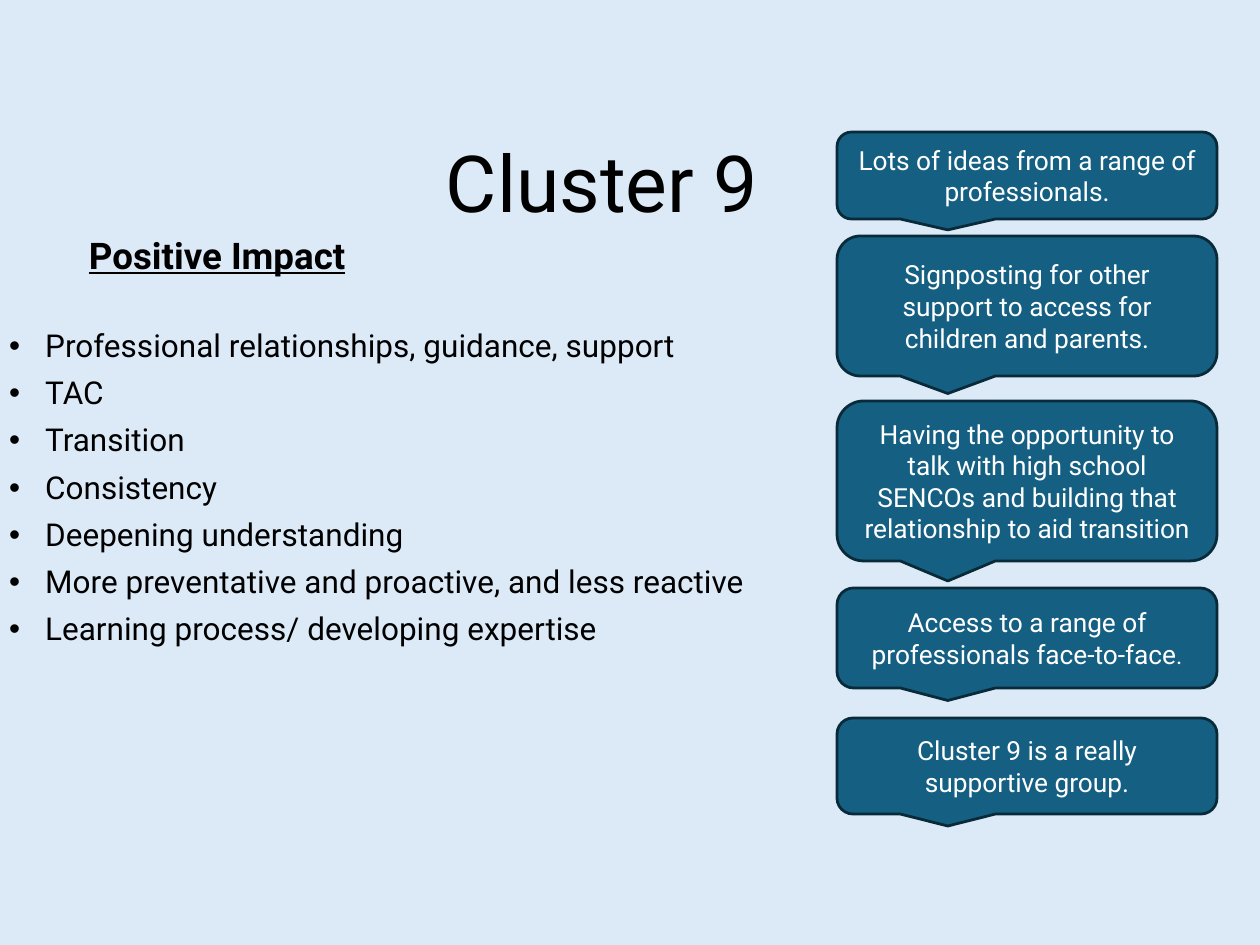
from lxml.etree import SubElement
from pptx import Presentation
from pptx.dml.color import RGBColor
from pptx.enum.shapes import MSO_SHAPE as SHAPE
from pptx.enum.text import MSO_ANCHOR as ANCHOR, MSO_AUTO_SIZE as AUTO, PP_ALIGN as ALIGN
from pptx.oxml.ns import qn
from pptx.util import Pt

# Content
TITLE = "Cluster 9"
HEADING = "Positive Impact"
IMPACTS = [
    "Professional relationships, guidance, support",
    "TAC",
    "Transition",
    "Consistency",
    "Deepening understanding",
    "More preventative and proactive, and less reactive",
    "Learning process/ developing expertise",
]
# Each callout: top, height, runs of (text, size)
CALLOUTS = [
    (132, 87, [("Lots of ideas from a range of professionals.", 14.2)]),
    (236, 140, [("Signposting for other support to access for children and parents.", 14.2)]),
    (401, 160, [("Having the opportunity to talk with high school SENCOs and "
                 "building that relationship to aid transition", 14.2)]),
    (588, 100, [("Access to a range of professionals face-to-face", 14.2), (".", 12.8)]),
    (718, 96, [("Cluster 9 is a really supportive group.", 14.2)]),
]

# Format
COLORS = {"bg": "DCEAF7", "text": "000000", "fill": "156082", "line": "092A39", "white": "FFFFFF"}
FONT = "Roboto"
PX = 6858  # EMU in one px
CALLOUT_LEFT, CALLOUT_WIDTH = 837, 380
INDENT = 36
BULLET = {"line_spacing": 0.9, "space_before": Pt(7.1)}


def px(*lengths):
    return [n * PX for n in lengths]


def rgb(name):
    return RGBColor.from_string(COLORS[name])


def set_all(target, **values):
    for name, value in values.items():
        setattr(target, name, value)


def add_run(p, text, size, color="text", **font):
    r = p.add_run()
    r.text = text
    set_all(r.font, name=FONT, size=Pt(size), **font)
    r.font.color.rgb = rgb(color)


def add_text(s, box, **frame):
    tf = s.shapes.add_textbox(*px(*box)).text_frame
    set_all(tf, **{"word_wrap": True, **frame})
    return tf


def add_bullet(p):
    pPr = p._p.get_or_add_pPr()
    pPr.set("marL", str(INDENT * PX))
    pPr.set("indent", str(-INDENT * PX))
    SubElement(pPr, qn("a:buFont")).set("typeface", "Arial")
    SubElement(pPr, qn("a:buChar")).set("char", "•")


def add_callout(s, top, height, runs):
    sp = s.shapes.add_shape(SHAPE.ROUNDED_RECTANGULAR_CALLOUT,
                            *px(CALLOUT_LEFT, top, CALLOUT_WIDTH, height))
    sp.shadow.inherit = False
    sp.fill.solid()
    sp.fill.fore_color.rgb = rgb("fill")
    sp.line.color.rgb = rgb("line")
    sp.line.width = Pt(1.5)
    tf = sp.text_frame
    set_all(tf, word_wrap=True, vertical_anchor=ANCHOR.MIDDLE)
    p = tf.paragraphs[0]
    p.alignment = ALIGN.CENTER
    for text, size in runs:
        add_run(p, text, size, "white")


def main():
    prs = Presentation()
    prs.slide_width, prs.slide_height = px(1260, 945)
    s = prs.slides.add_slide(prs.slide_layouts[6])
    s.background.fill.solid()
    s.background.fill.fore_color.rgb = rgb("bg")

    # Title
    p = add_text(s, (380, 136, 444, 100), vertical_anchor=ANCHOR.BOTTOM).paragraphs[0]
    set_all(p, alignment=ALIGN.CENTER, line_spacing=0.9)
    add_run(p, TITLE, 42.5)

    # Bulleted impacts
    tf = add_text(s, (-4, 324, 875, 335))
    for i, text in enumerate(IMPACTS):
        p = tf.add_paragraph() if i else tf.paragraphs[0]
        add_bullet(p)
        set_all(p, **BULLET)
        if i == 0:
            p.space_before = Pt(0)
        add_run(p, text, 17)

    # Heading
    tf = add_text(s, (80, 228, 280, 55), word_wrap=False, auto_size=AUTO.SHAPE_TO_FIT_TEXT,
                  margin_left=9 * PX, margin_right=9 * PX,
                  margin_top=5 * PX, margin_bottom=5 * PX)
    add_run(tf.paragraphs[0], HEADING, 19.8, bold=True, underline=True)

    # Callouts
    for callout in CALLOUTS:
        add_callout(s, *callout)

    prs.save("out.pptx")


if __name__ == "__main__":
    main()
